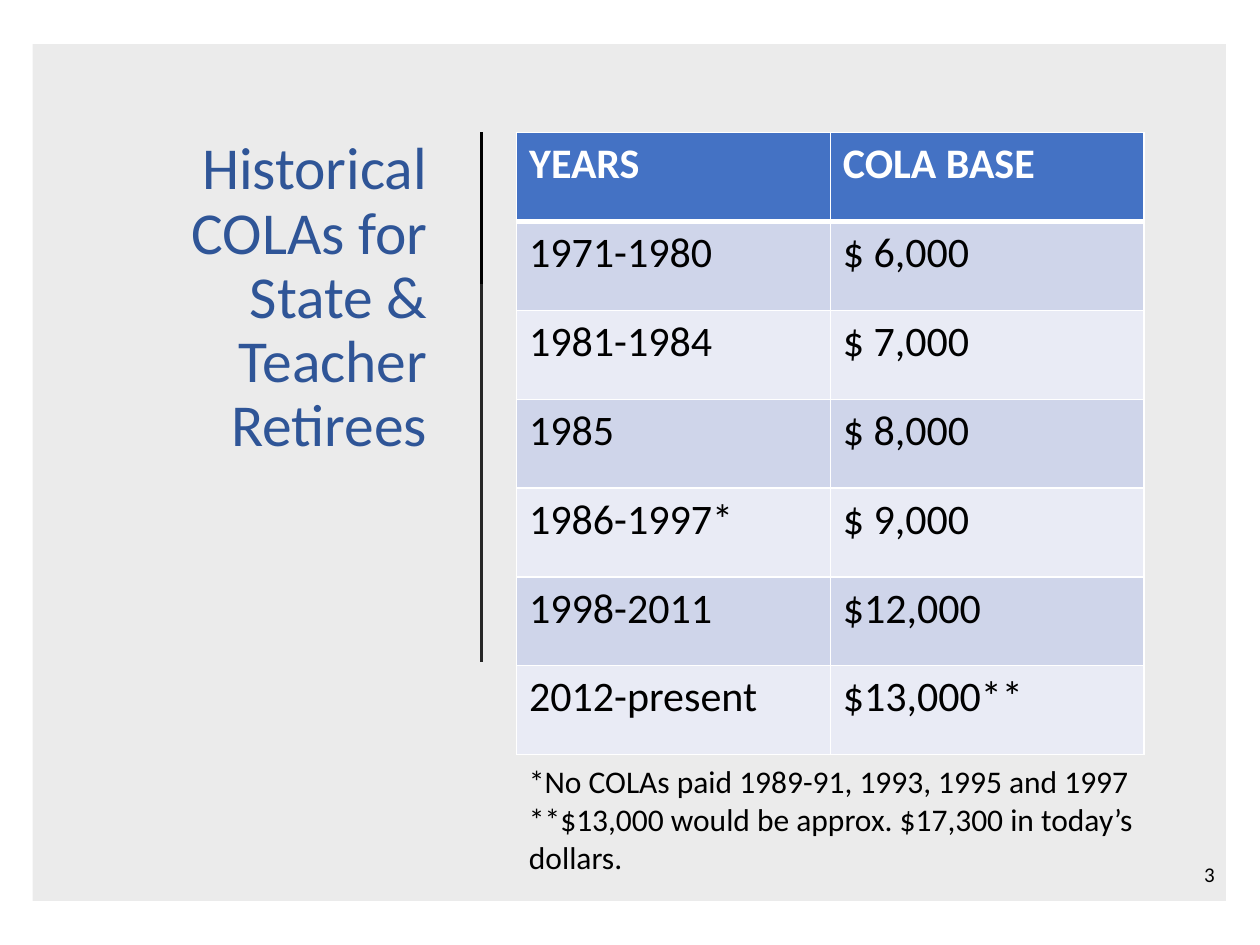
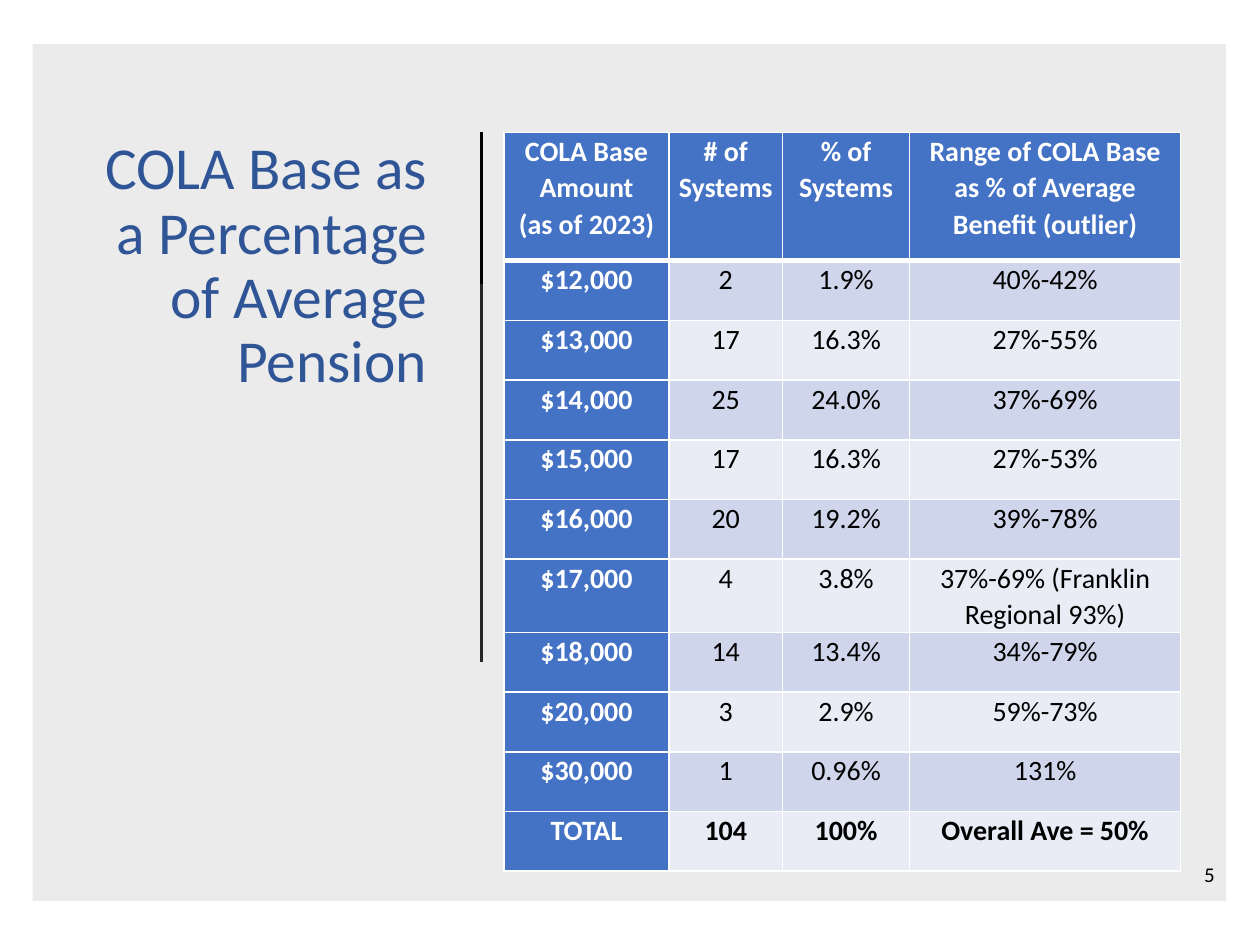
from lxml import etree
from pptx import Presentation
from pptx.dml.color import RGBColor
from pptx.enum.shapes import MSO_CONNECTOR, MSO_SHAPE
from pptx.enum.text import MSO_ANCHOR, MSO_AUTO_SIZE, PP_ALIGN
from pptx.oxml.ns import qn
from pptx.util import Inches, Pt

STRAIGHT = MSO_CONNECTOR.STRAIGHT
RECTANGLE = MSO_SHAPE.RECTANGLE
TOP = MSO_ANCHOR.TOP
LEFT, CENTER, RIGHT = PP_ALIGN.LEFT, PP_ALIGN.CENTER, PP_ALIGN.RIGHT
FIXED_SIZE, GROW_SHAPE = MSO_AUTO_SIZE.NONE, MSO_AUTO_SIZE.SHAPE_TO_FIT_TEXT

FONT = "Calibri"
COLORS = {
    "black": "000000",
    "white": "FFFFFF",
    "divider": "262626",
    "title": "2F5597",
    "header": "4472C4",
    "band_dark": "CFD5EA",
    "band_light": "E9EBF5",
}
TITLE_ONLY_LAYOUT = 5
CONTENT_TOP = 1.05
DIVIDER_X = 3.82
PANEL_OPACITY = 8

BASE_HISTORY = [
    ("YEARS", "COLA BASE"),
    ("1971-1980", "$ 6,000"),
    ("1981-1984", "$ 7,000"),
    ("1985", "$ 8,000"),
    ("1986-1997*", "$ 9,000"),
    ("1998-2011", "$12,000"),
    ("2012-present", "$13,000**"),
]
HISTORY_NOTES = [
    "*No COLAs paid 1989-91, 1993, 1995 and 1997",
    "**$13,000 would be approx. $17,300 in today’s dollars.",
]
BASE_BY_SYSTEM = [
    ("COLA Base Amount\v(as of 2023)", "# of Systems", "% of Systems",
     "Range of COLA Base as % of Average Benefit (outlier)"),
    ("$12,000", "2", "1.9%", "40%-42%"),
    ("$13,000", "17", "16.3%", "27%-55%"),
    ("$14,000", "25", "24.0%", "37%-69%"),
    ("$15,000", "17", "16.3%", "27%-53%"),
    ("$16,000", "20", "19.2%", "39%-78%"),
    ("$17,000", "4", "3.8%", "37%-69% (Franklin Regional 93%)"),
    ("$18,000", "14", "13.4%", "34%-79%"),
    ("$20,000", "3", "2.9%", "59%-73%"),
    ("$30,000", "1", "0.96%", "131%"),
    ("TOTAL", "104", "100%", "Overall Ave = 50%"),
]
HISTORY_FORMAT = {"size": 24, "paragraph": {"alignment": LEFT}, "cell": {}}
SYSTEM_FORMAT = {
    "size": 16,
    "paragraph": {"alignment": CENTER, "line_spacing": 1.07, "space_after": Pt(8)},
    "cell": {
        "margin_left": Inches(0.07),
        "margin_right": Inches(0.07),
        "margin_top": 0,
        "margin_bottom": 0,
    },
}


def color(name):
    return RGBColor.from_string(COLORS[name])


def set_attributes(target, values):
    for name, value in values.items():
        setattr(target, name, value)


def format_paragraph(paragraph, size, color_name="black", bold=False, **values):
    set_attributes(paragraph, values)
    for run in paragraph.runs:
        set_attributes(run.font, {"name": FONT, "size": Pt(size), "bold": bold})
        run.font.color.rgb = color(color_name)


def add_panel(slide):
    """Add the translucent grey panel behind the content."""
    panel = slide.shapes.add_shape(
        RECTANGLE, Inches(0.26), Inches(0.35), Inches(9.47), Inches(6.8))
    panel.shadow.inherit = False
    panel.line.fill.background()
    panel.fill.solid()
    panel.fill.fore_color.rgb = color("black")
    fill_color = panel.element.spPr.find(qn("a:solidFill"))[0]
    etree.SubElement(fill_color, qn("a:alpha"), val=str(PANEL_OPACITY * 1000))


def add_divider(slide, start_y, end_y, color_name):
    x = Inches(DIVIDER_X)
    line = slide.shapes.add_connector(STRAIGHT, x, Inches(start_y), x, Inches(end_y))
    line.line.width = Pt(1.5)
    line.line.color.rgb = color(color_name)
    etree.SubElement(line.element.spPr, qn("a:effectLst"))


def add_text(slide, left, top, width, height, lines, size, alignment=LEFT,
             auto_size=FIXED_SIZE):
    box = slide.shapes.add_textbox(
        Inches(left), Inches(top), Inches(width), Inches(height))
    frame = box.text_frame
    set_attributes(frame, {"word_wrap": True, "auto_size": auto_size})
    frame.text = "\n".join(lines)
    for paragraph in frame.paragraphs:
        format_paragraph(paragraph, size, alignment=alignment)


def place_title(slide, text):
    """Fill the title placeholder and bring it in front of the panel."""
    title = slide.shapes.title
    set_attributes(title, {
        "left": Inches(0.45), "top": Inches(CONTENT_TOP),
        "width": Inches(3.04), "height": Inches(5.74),
    })
    frame = title.text_frame
    frame.text = text
    set_attributes(frame, {
        "word_wrap": True, "auto_size": FIXED_SIZE, "vertical_anchor": TOP})
    format_paragraph(frame.paragraphs[0], 34, "title",
                     alignment=RIGHT, line_spacing=0.9)
    title.element.getparent().append(title.element)


def add_base_slide(presentation, title, number):
    layout = presentation.slide_layouts[TITLE_ONLY_LAYOUT]
    slide = presentation.slides.add_slide(layout)
    add_panel(slide)
    add_divider(slide, 2.25, 5.25, "divider")
    add_divider(slide, 2.25, CONTENT_TOP, "black")
    place_title(slide, title)
    add_text(slide, 7.49, 6.79, 2.25, 0.4, [str(number)], 12, RIGHT)
    return slide


def set_borders(cell, widths):
    """Draw white borders; widths maps the sides L, R, T, B to points."""
    properties = cell._tc.get_or_add_tcPr()
    for side, width in widths.items():
        line = etree.SubElement(properties, qn(f"a:ln{side}"), w=str(Pt(width)))
        fill = etree.SubElement(line, qn("a:solidFill"))
        etree.SubElement(fill, qn("a:srgbClr"), val=COLORS["white"])


def add_table(slide, left, column_widths, header_height, body_height, rows, style,
              first_column=False, total_row=False):
    body_count = len(rows) - 1
    frame = slide.shapes.add_table(
        len(rows), len(column_widths), Inches(left), Inches(CONTENT_TOP),
        Inches(sum(column_widths)), Inches(header_height + body_height))
    table = frame.table
    set_attributes(table, {"first_col": first_column, "last_row": total_row})
    for column, width in zip(table.columns, column_widths):
        column.width = Inches(width)
    for row_index, values in enumerate(rows):
        is_header = row_index == 0
        is_total = total_row and row_index == body_count
        table.rows[row_index].height = Inches(
            header_height if is_header else body_height / body_count)
        band = "band_dark" if row_index % 2 else "band_light"
        borders = {"L": 1, "R": 1, "T": 1, "B": 3} if is_header else {
            "L": 1, "R": 1, "B": 1}
        for column_index, value in enumerate(values):
            is_heading = is_header or (first_column and column_index == 0)
            cell = table.cell(row_index, column_index)
            set_borders(cell, borders)
            cell.fill.solid()
            cell.fill.fore_color.rgb = color("header" if is_heading else band)
            set_attributes(cell, style["cell"])
            cell.text = value
            format_paragraph(
                cell.text_frame.paragraphs[0], style["size"],
                "white" if is_heading else "black",
                is_heading or is_total, **style["paragraph"])


def main():
    presentation = Presentation()
    presentation.slide_width = Inches(10)
    presentation.slide_height = Inches(7.5)

    history = add_base_slide(
        presentation, "Historical COLAs for State & Teacher Retirees", 3)
    add_table(history, 4.1, [2.49, 2.49], 0.71, 4.23, BASE_HISTORY, HISTORY_FORMAT)
    add_text(history, 4.1, 6, 5.13, 1.01, HISTORY_NOTES, 18, auto_size=GROW_SHAPE)

    systems = add_base_slide(
        presentation, "COLA Base as a Percentage of Average Pension", 5)
    add_table(systems, 4, [1.31, 0.9, 1.01, 2.15], 1.02, 4.74, BASE_BY_SYSTEM,
              SYSTEM_FORMAT, first_column=True, total_row=True)

    presentation.save("out.pptx")


if __name__ == "__main__":
    main()
